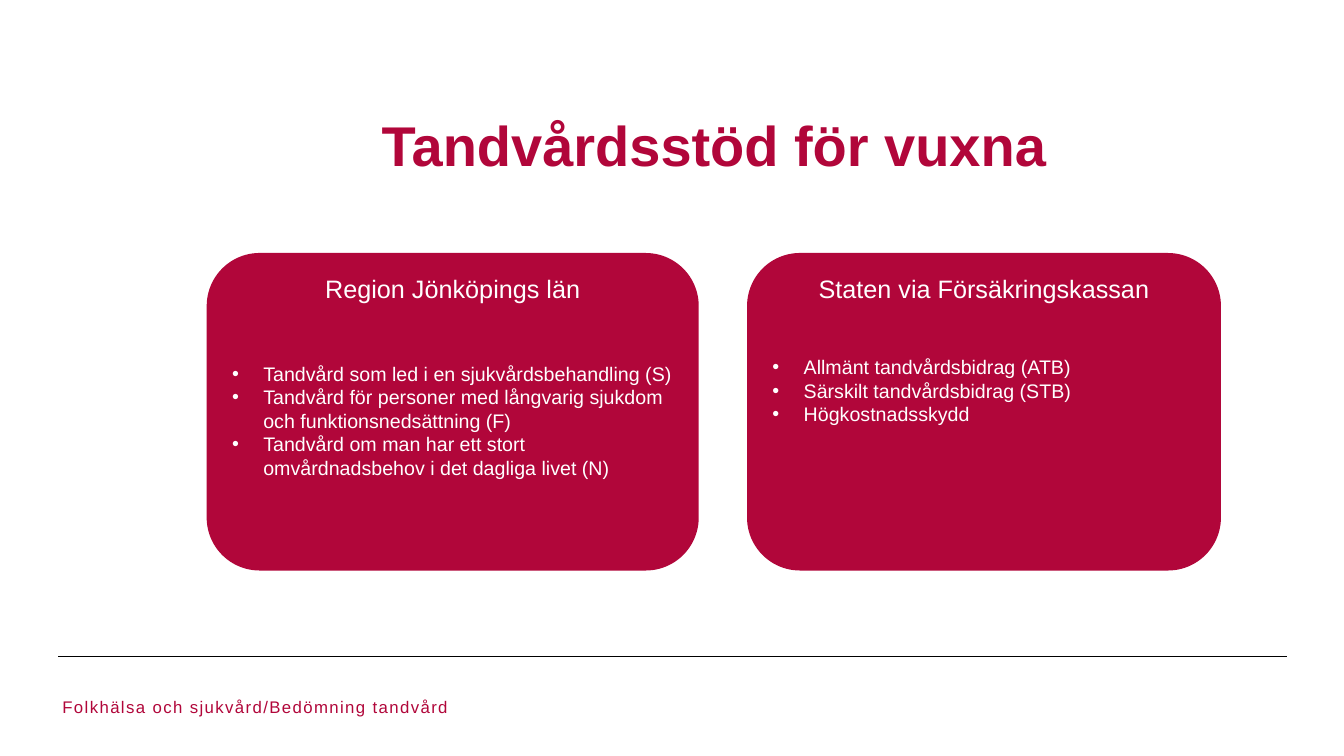
import pptx
import pptx.util
import pptx.dml.color
import pptx.enum.shapes
import pptx.enum.text
import pptx.oxml
import pptx.oxml.ns
from pptx.util import Inches

CRIMSON = pptx.dml.color.RGBColor(0xB1, 0x06, 0x3A)
WHITE = pptx.dml.color.RGBColor(0xFF, 0xFF, 0xFF)
BLACK = pptx.dml.color.RGBColor(0, 0, 0)
ALIGN = pptx.enum.text.PP_ALIGN
MIDDLE = pptx.enum.text.MSO_ANCHOR.MIDDLE

LEFT, RIGHT = 2.05, 12.11
CARD_TOP, CARD_HEIGHT = 2.51, 3.15
REGION_WIDTH, STATE_WIDTH = 4.88, 4.7

REGION_SUPPORT = [
    "Tandvård som led i en sjukvårdsbehandling (S)",
    "Tandvård för personer med långvarig sjukdom och funktionsnedsättning (F)",
    "Tandvård om man har ett stort omvårdnadsbehov i det dagliga livet (N)",
]
STATE_SUPPORT = [
    "Allmänt tandvårdsbidrag (ATB)",
    "Särskilt tandvårdsbidrag (STB)",
    "Högkostnadsskydd",
]


def write(paragraph, text, size, color, align=ALIGN.LEFT, bold=False):
    paragraph.text = text
    paragraph.alignment = align
    for run in paragraph.runs:
        run.font.name = "Arial"
        run.font.size = pptx.util.Pt(size)
        run.font.bold = bold
        run.font.color.rgb = color


def add_bullet(paragraph):
    properties = paragraph._p.get_or_add_pPr()
    properties.set("marL", str(Inches(0.31)))
    properties.set("indent", str(-Inches(0.31)))
    for tag, attribute, value in (("a:buFont", "typeface", "Arial"), ("a:buChar", "char", "•")):
        bullet = pptx.oxml.parse_xml(
            f'<{tag} {pptx.oxml.ns.nsdecls("a")} {attribute}="{value}"/>')
        properties.append(bullet)


def add_title(slide, left, top, width, height):
    title = slide.shapes.title
    title.left, title.top = Inches(left), Inches(top)
    title.width, title.height = Inches(width), Inches(height)
    title.text_frame.vertical_anchor = MIDDLE
    write(title.text_frame.paragraphs[0], "Tandvårdsstöd för vuxna", 40, CRIMSON,
          ALIGN.CENTER, True)


def add_support_card(slide, left, top, width, height, heading, benefits, list_gap):
    card = slide.shapes.add_shape(
        pptx.enum.shapes.MSO_SHAPE.ROUNDED_RECTANGLE,
        Inches(left), Inches(top), Inches(width), Inches(height))
    card.shadow.inherit = False
    card.fill.solid()
    card.fill.fore_color.rgb = CRIMSON
    card.line.fill.background()
    frame = card.text_frame
    frame.word_wrap = True
    frame.vertical_anchor = pptx.enum.text.MSO_ANCHOR.TOP
    write(frame.paragraphs[0], heading, 18, WHITE, ALIGN.CENTER)
    frame.paragraphs[0].space_after = pptx.util.Pt(list_gap)
    for benefit in benefits:
        paragraph = frame.add_paragraph()
        write(paragraph, benefit, 14, WHITE)
        add_bullet(paragraph)


def add_footer(slide, left, top, width, height):
    rule = slide.shapes.add_connector(
        pptx.enum.shapes.MSO_CONNECTOR.STRAIGHT,
        Inches(left), Inches(top), Inches(left + width), Inches(top))
    rule.line.color.rgb = BLACK
    rule.line.width = pptx.util.Pt(0.5)
    rule._element.spPr.append(
        pptx.oxml.parse_xml(f'<a:effectLst {pptx.oxml.ns.nsdecls("a")}/>'))

    department = slide.shapes.add_textbox(
        Inches(left - 0.06), Inches(top + height - 0.3), Inches(4.08), Inches(0.3))
    frame = department.text_frame
    frame.word_wrap = False
    frame.vertical_anchor = MIDDLE
    write(frame.paragraphs[0], "Folkhälsa och sjukvård/Bedömning tandvård", 12, CRIMSON)
    frame.paragraphs[0].runs[0].font._element.set("spc", "100")


def main():
    presentation = pptx.Presentation()
    presentation.slide_width = Inches(13.33)
    presentation.slide_height = Inches(7.5)
    slide = presentation.slides.add_slide(presentation.slide_layouts[5])
    add_title(slide, LEFT, 1.07, RIGHT - LEFT, 0.71)
    add_support_card(slide, RIGHT - STATE_WIDTH, CARD_TOP, STATE_WIDTH, CARD_HEIGHT,
                     "Staten via Försäkringskassan", STATE_SUPPORT, 36.8)
    add_support_card(slide, LEFT, CARD_TOP, REGION_WIDTH, CARD_HEIGHT,
                     "Region Jönköpings län", REGION_SUPPORT, 41.4)
    add_footer(slide, 0.58, 6.51, 12.18, 0.65)
    presentation.save("out.pptx")


if __name__ == "__main__":
    main()
